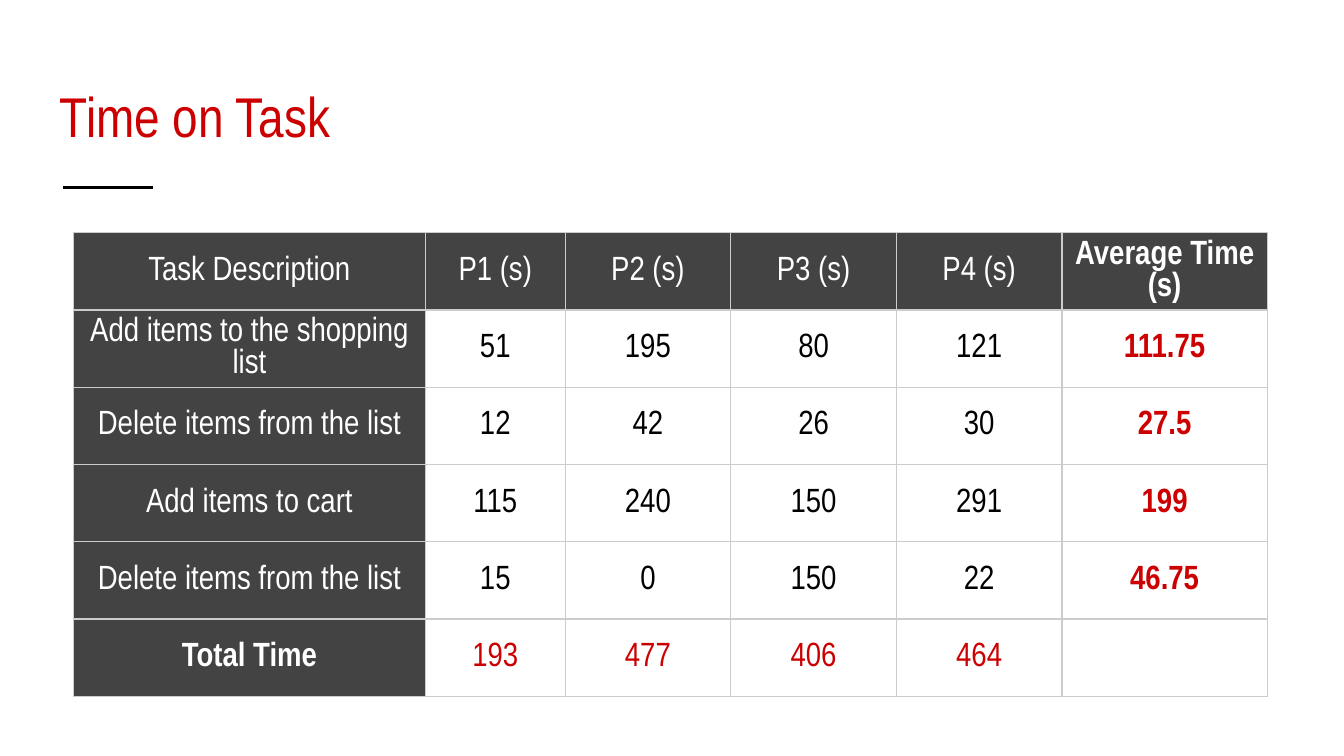
"""Build the Time on Task slide with its usability timing table."""
from dataclasses import dataclass

import pptx
import pptx.dml.color
import pptx.enum.shapes
import pptx.enum.text
import pptx.oxml.ns
import pptx.util
from lxml import etree
from pptx.util import Cm

COLORS = {"black": "000000", "white": "FFFFFF", "red": "CC0000",
          "dark": "434343", "grid": "CCCCCC"}
FONT = "Arial Narrow"
COL_WIDTHS = (6.65, 2.64, 3.13, 3.13, 3.13, 3.88)
ROW_HEIGHT = 1.46
CELL_FORMAT = {"margin_left": Cm(0.08), "margin_right": Cm(0.08),
               "margin_top": Cm(0.05), "margin_bottom": Cm(0.05),
               "vertical_anchor": pptx.enum.text.MSO_ANCHOR.MIDDLE}
CELL_PARAGRAPH = {"alignment": pptx.enum.text.PP_ALIGN.CENTER,
                  "line_spacing": pptx.util.Pt(17.3)}
TITLE_FORMAT = {"margin_left": Cm(0.25), "margin_right": Cm(0.25),
                "margin_top": Cm(0.25), "margin_bottom": Cm(0.25),
                "vertical_anchor": pptx.enum.text.MSO_ANCHOR.BOTTOM,
                "word_wrap": True}
ROWS = (
    ("Task Description", "P1 (s)", "P2 (s)", "P3 (s)", "P4 (s)", "Average Time (s)"),
    ("Add items to the shopping list", "51", "195", "80", "121", "111.75"),
    ("Delete items from the list", "12", "42", "26", "30", "27.5"),
    ("Add items to cart", "115", "240", "150", "291", "199"),
    ("Delete items from the list", "15", "0", "150", "22", "46.75"),
    ("Total Time", "193", "477", "406", "464", ""),
)


@dataclass
class CellStyle:
    """Look of one table cell."""
    color: str
    bold: bool
    fill: str | None


def rgb(name: str) -> pptx.dml.color.RGBColor:
    """Return a named colour."""
    return pptx.dml.color.RGBColor.from_string(COLORS[name])


def apply(target: object, values: dict) -> None:
    """Set several attributes at once."""
    for name, value in values.items():
        setattr(target, name, value)


def set_font(font: object, size: float, color: str, bold: bool = False) -> None:
    """Format a font."""
    apply(font, {"name": FONT, "size": pptx.util.Pt(size), "bold": bold})
    font.color.rgb = rgb(color)


def cell_style(row: int, col: int) -> CellStyle:
    """Choose the look of a cell from its place in the table."""
    total, average = row == len(ROWS) - 1, col == len(COL_WIDTHS) - 1
    if row == 0 or col == 0:
        return CellStyle("white", average or total, "dark")
    return CellStyle("red" if total or average else "black", average, None)


def add_borders(cell: object) -> None:
    """Draw the four thin grid lines of a cell."""
    tc_pr = cell._tc.get_or_add_tcPr()
    for side in ("lnL", "lnR", "lnT", "lnB"):
        ln = etree.SubElement(tc_pr, pptx.oxml.ns.qn(f"a:{side}"),
                              w=str(pptx.util.Pt(0.75)))
        fill = etree.SubElement(ln, pptx.oxml.ns.qn("a:solidFill"))
        etree.SubElement(fill, pptx.oxml.ns.qn("a:srgbClr"), val=COLORS["grid"])


def fill_cell(cell: object, text: str, style: CellStyle) -> None:
    """Write and format one cell."""
    add_borders(cell)
    apply(cell, CELL_FORMAT)
    if style.fill:
        cell.fill.solid()
        cell.fill.fore_color.rgb = rgb(style.fill)
    else:
        cell.fill.background()
    p = cell.text_frame.paragraphs[0]
    apply(p, CELL_PARAGRAPH)
    if text:
        r = p.add_run()
        r.text = text
        set_font(r.font, 18, style.color, style.bold)


def add_title(s: object) -> None:
    """Add the heading and the short rule below it."""
    sp = s.shapes.add_textbox(Cm(0.87), Cm(1.04), Cm(23.67), Cm(2.03))
    tf = sp.text_frame
    apply(tf, TITLE_FORMAT)
    r = tf.paragraphs[0].add_run()
    r.text = "Time on Task"
    set_font(r.font, 30, "red")
    rule = s.shapes.add_connector(pptx.enum.shapes.MSO_CONNECTOR.STRAIGHT,
                                  Cm(1.19), Cm(3.54), Cm(2.9), Cm(3.54))
    rule.line.color.rgb = rgb("black")
    rule.line.width = pptx.util.Pt(1.5)
    etree.SubElement(rule._element.spPr, pptx.oxml.ns.qn("a:effectLst"))


def add_times(s: object) -> None:
    """Add the table of task times."""
    table = s.shapes.add_table(len(ROWS), len(COL_WIDTHS), Cm(1.39), Cm(4.4),
                               Cm(sum(COL_WIDTHS)), Cm(ROW_HEIGHT * len(ROWS))).table
    apply(table, {"first_row": False, "horz_banding": False})
    for column, width in zip(table.columns, COL_WIDTHS):
        column.width = Cm(width)
    for i, texts in enumerate(ROWS):
        table.rows[i].height = Cm(ROW_HEIGHT)
        for j, text in enumerate(texts):
            fill_cell(table.cell(i, j), text, cell_style(i, j))


def main() -> None:
    """Build and save the slide."""
    prs = pptx.Presentation()
    apply(prs, {"slide_width": Cm(25.4), "slide_height": Cm(14.29)})
    s = prs.slides.add_slide(prs.slide_layouts[6])
    add_title(s)
    add_times(s)
    prs.save("out.pptx")


if __name__ == "__main__":
    main()
